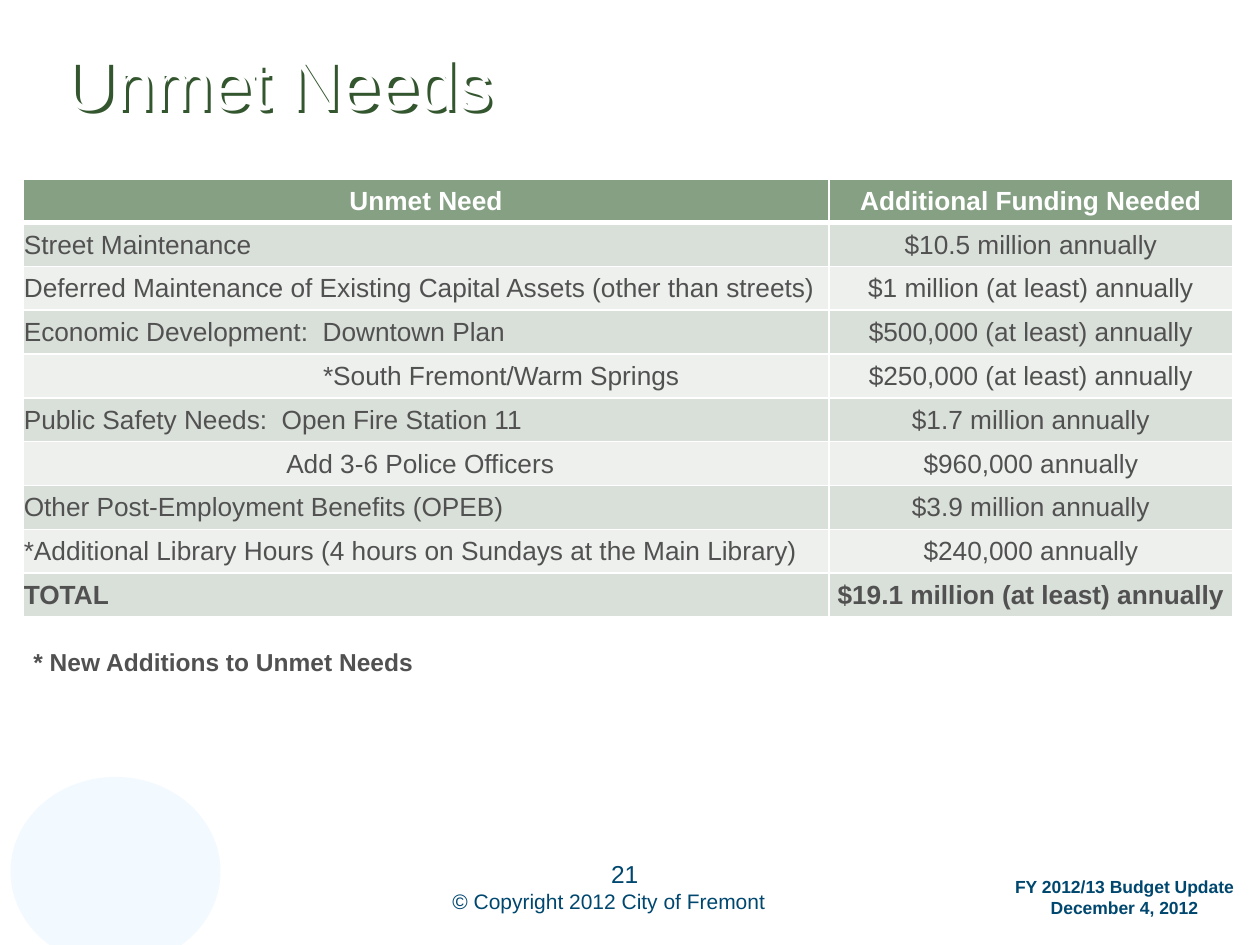
from lxml import etree
from pptx import Presentation
from pptx.dml.color import RGBColor
from pptx.enum.shapes import MSO_SHAPE as SHAPE
from pptx.enum.text import MSO_ANCHOR as ANCHOR, PP_ALIGN as ALIGN
from pptx.oxml import parse_xml
from pptx.oxml.ns import nsdecls, qn
from pptx.util import Pt

WHITE, GRAY, NAVY, SHADOW = "FFFFFF", "515151", "00476F", "33562F"
HEADER, BANDS = "85A083", ("D9DFD9", "EDF0ED")

# need, funding, indent of the need
ROWS = [
    ("Unmet Need", "Additional Funding Needed", 0),
    ("Street Maintenance", "$10.5 million annually", 0),
    ("Deferred Maintenance of Existing Capital Assets (other than streets)",
     "$1 million (at least) annually", 0),
    ("Economic Development:  Downtown Plan", "$500,000 (at least) annually", 0),
    ("*South Fremont/Warm Springs", "$250,000 (at least) annually", 171),
    ("Public Safety Needs:  Open Fire Station 11", "$1.7 million annually", 0),
    ("Add 3-6 Police Officers", "$960,000 annually", 150),
    ("Other Post-Employment Benefits (OPEB)", "$3.9 million annually", 0),
    ("*Additional Library Hours (4 hours on Sundays at the Main Library)",
     "$240,000 annually", 0),
    ("TOTAL", "$19.1 million (at least) annually", 0),
]
TABLE_LEFT, TABLE_TOP, ROW_HEIGHT = 13, 102.2, 25.05
COL_WIDTHS = (460.8, 230.4)

# box, lines, alignment, anchor, font
TEXTS = {
    "title": ((30, 2, 660, 90), ["Unmet Needs"], ALIGN.LEFT, ANCHOR.MIDDLE,
              dict(size=40, color=WHITE)),
    "copyright": ((222, 504, 252, 24), ["© Copyright 2012 City of Fremont"],
                  ALIGN.CENTER, ANCHOR.TOP, dict(size=12, color=NAVY)),
    "note": ((12, 366, 276, 43), ["* New Additions to Unmet Needs"],
             ALIGN.LEFT, ANCHOR.TOP, dict(size=14, color=GRAY, bold=True)),
    "page number": ((312, 481, 90, 36), ["21"], ALIGN.CENTER, ANCHOR.MIDDLE,
                    dict(size=14, color=NAVY)),
    "date": ((564.5, 497, 156, 32), ["FY 2012/13 Budget Update", "December 4, 2012"],
             ALIGN.CENTER, ANCHOR.TOP, dict(size=10, color=NAVY, bold=True)),
}


def rgb(color):
    return RGBColor.from_string(color)


def write(tf, lines, align, size, color, bold=False):
    for i, line in enumerate(lines):
        p = tf.paragraphs[0] if i == 0 else tf.add_paragraph()
        p.alignment = align
        r = p.add_run()
        r.text = line
        for name, value in dict(name="Arial", size=Pt(size), bold=bold).items():
            setattr(r.font, name, value)
        r.font.color.rgb = rgb(color)


def add_text(slide, name):
    box, lines, align, anchor, font = TEXTS[name]
    sp = slide.shapes.add_textbox(*map(Pt, box))
    tf = sp.text_frame
    tf.word_wrap = True
    tf.vertical_anchor = anchor
    write(tf, lines, align, **font)
    return sp


def add_shadow(sp):
    """Cast a hard shadow down and to the right."""
    sp._element.spPr.append(parse_xml(
        f'<a:effectLst {nsdecls("a")}><a:outerShdw dist="{Pt(2.83)}" dir="2700000" '
        f'algn="ctr"><a:srgbClr val="{SHADOW}"/></a:outerShdw></a:effectLst>'))


def set_borders(cell, **widths):
    tcPr = cell._tc.get_or_add_tcPr()
    for i, side in enumerate("LRTB"):
        tcPr.insert(i, parse_xml(
            f'<a:ln{side} {nsdecls("a")} w="{Pt(widths.get(side, 1))}"><a:solidFill>'
            f'<a:srgbClr val="{WHITE}"/></a:solidFill></a:ln{side}>'))


def add_needs_table(slide):
    table = slide.shapes.add_table(
        len(ROWS), len(COL_WIDTHS), Pt(TABLE_LEFT), Pt(TABLE_TOP),
        Pt(sum(COL_WIDTHS)), Pt(ROW_HEIGHT * len(ROWS))).table
    for column, width in zip(table.columns, COL_WIDTHS):
        column.width = Pt(width)
    for i, (need, funding, indent) in enumerate(ROWS):
        table.rows[i].height = Pt(ROW_HEIGHT)
        header = i == 0
        bold = header or i == len(ROWS) - 1
        for j, text in enumerate((need, funding)):
            cell = table.cell(i, j)
            margins = dict(margin_left=Pt(0.6 + (indent if j == 0 else 0)),
                           margin_right=Pt(0.6), margin_top=Pt(0.6), margin_bottom=0,
                           vertical_anchor=ANCHOR.MIDDLE)
            for name, value in margins.items():
                setattr(cell, name, value)
            cell.fill.solid()
            cell.fill.fore_color.rgb = rgb(HEADER if header else BANDS[(i - 1) % 2])
            set_borders(cell, T=3 if i == 1 else 1, B=3 if header else 1)
            write(cell.text_frame, [text], ALIGN.CENTER if header or j else ALIGN.LEFT,
                  15, WHITE if header else GRAY, bold)


def add_circle(slide):
    sp = slide.shapes.add_shape(SHAPE.OVAL, Pt(6), Pt(444), Pt(120), Pt(108))
    sp.shadow.inherit = False
    sp.fill.solid()
    sp.fill.fore_color.rgb = rgb("EFF9FF")
    sp.line.fill.background()
    color = sp._element.spPr.find(qn("a:solidFill"))[0]
    etree.SubElement(color, qn("a:alpha"), val="81000")


def main():
    prs = Presentation()
    prs.slide_width, prs.slide_height = Pt(720), Pt(540)
    slide = prs.slides.add_slide(prs.slide_layouts[6])
    add_shadow(add_text(slide, "title"))
    add_text(slide, "copyright")
    add_circle(slide)
    note = add_text(slide, "note")
    for fill in (note.fill, note.line.fill):
        fill.solid()
        fill.fore_color.rgb = rgb(WHITE)
    note.line.width = Pt(0.75)
    add_text(slide, "page number")
    add_text(slide, "date")
    add_needs_table(slide)
    prs.save("out.pptx")


if __name__ == "__main__":
    main()
